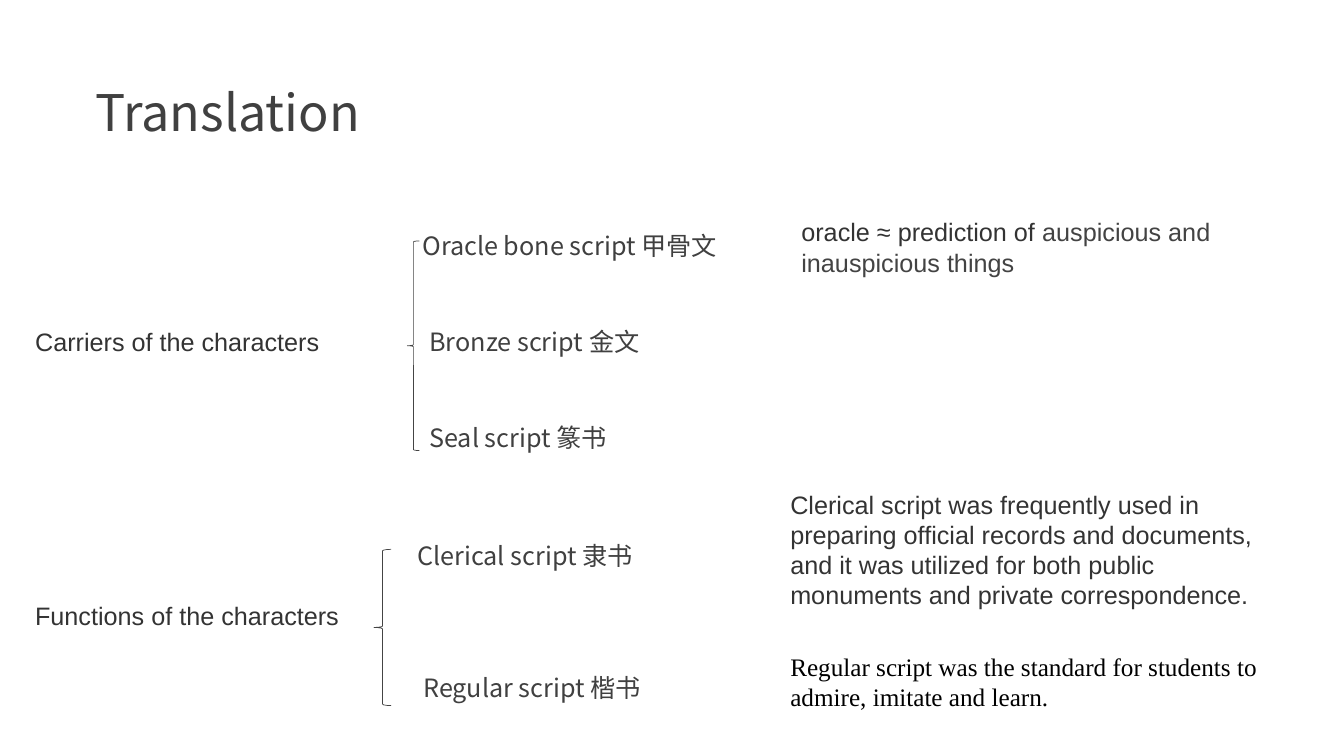
from collections import namedtuple

from lxml import etree
from pptx import Presentation
from pptx import util as u
from pptx.dml.color import RGBColor
from pptx.enum import shapes, text
from pptx.oxml import ns

PX = 9144
SANS, CJK, SERIF = "Arial", "Noto Sans CJK SC", "Times New Roman"
BLACK = RGBColor(0x00, 0x00, 0x00)
INK = RGBColor(0x33, 0x33, 0x33)
SOFT_INK = RGBColor(0x43, 0x43, 0x43)
GREY = RGBColor(0x40, 0x40, 0x40)
BRACE_GREY = RGBColor(0x44, 0x44, 0x44)

Box = namedtuple("Box", "left top width height")


def inside(box, left, top, width, height):
    """Return a box placed relative to the corner of another one."""
    return Box(box.left + left, box.top + top, width, height)


def to_emu(box):
    """Turn the px lengths of a box into EMU."""
    return [u.Emu(length * PX) for length in box]


def add_text(page, box, spans, font, size=18, spacing=None, anchor=text.MSO_ANCHOR.TOP):
    """Write one paragraph of (wording, colour) spans in a box."""
    frame = page.shapes.add_textbox(*to_emu(box)).text_frame
    frame.word_wrap = True
    frame.auto_size = text.MSO_AUTO_SIZE.SHAPE_TO_FIT_TEXT
    frame.vertical_anchor = anchor
    para = frame.paragraphs[0]
    para.line_spacing = spacing
    for wording, colour in spans:
        span = para.add_run()
        span.text = wording
        span.font.name = font
        span.font.size = u.Pt(size)
        span.font.color.rgb = colour
        east_asian = etree.SubElement(span.font._element, ns.qn("a:ea"))
        east_asian.set("typeface", font)


def add_title(page, box, wording):
    """Write the slide title."""
    add_text(page, box, [(wording, GREY)], CJK, 36, 1.2, text.MSO_ANCHOR.MIDDLE)


def add_branch(page, box, label, label_top, brace, scripts):
    """Draw a label, a brace and the scripts that the brace gathers."""
    add_text(page, inside(box, 0, label_top, 346, 40), [(label, INK)], SANS)
    bracket = page.shapes.add_shape(
        shapes.MSO_SHAPE.LEFT_BRACE, *to_emu(inside(box, *brace)))
    bracket.shadow.inherit = False
    bracket.fill.background()
    bracket.line.color.rgb = BRACE_GREY
    bracket.line.width = u.Pt(0.5)
    for name, left, top in scripts:
        add_text(page, inside(box, left, top, 338, 43), [(name, GREY)], CJK, spacing=1.2)


def add_notes(page, box):
    """Write the explanations down the right-hand column."""
    notes = [
        (11, 0, 71, SANS, [("oracle ≈ prediction of ", INK),
                           ("auspicious and inauspicious things", SOFT_INK)]),
        (0, 270, 131, SANS, [("Clerical script was frequently used in preparing official "
                              "records and documents, and it was utilized for both public "
                              "monuments and private correspondence.", INK)]),
        (0, 431, 71, SERIF, [("Regular script was the standard for students to admire, "
                              "imitate and learn.", BLACK)]),
    ]
    for left, top, height, font, spans in notes:
        add_text(page, inside(box, left, top, 487, height), spans, font)


def main():
    """Build the slide and save the deck."""
    deck = Presentation()
    deck.slide_width, deck.slide_height = u.Emu(1333 * PX), u.Emu(750 * PX)
    page = deck.slides.add_slide(deck.slide_layouts[6])
    add_title(page, Box(85, 66, 769, 77), "Translation")
    add_branch(page, Box(25, 218, 717, 233), "Carriers of the characters", 101,
               (379, 21, 12, 208),
               [("Oracle bone script 甲骨文", 384, 0),
                ("Bronze script 金文", 391, 95),
                ("Seal script 篆书", 391, 190)])
    add_branch(page, Box(25, 525, 717, 175), "Functions of the characters", 66,
               (346, 20, 17, 155),
               [("Clerical script 隶书", 379, 0),
                ("Regular script 楷书", 385, 131)])
    add_notes(page, Box(774, 210, 498, 502))
    deck.save("out.pptx")


if __name__ == "__main__":
    main()
